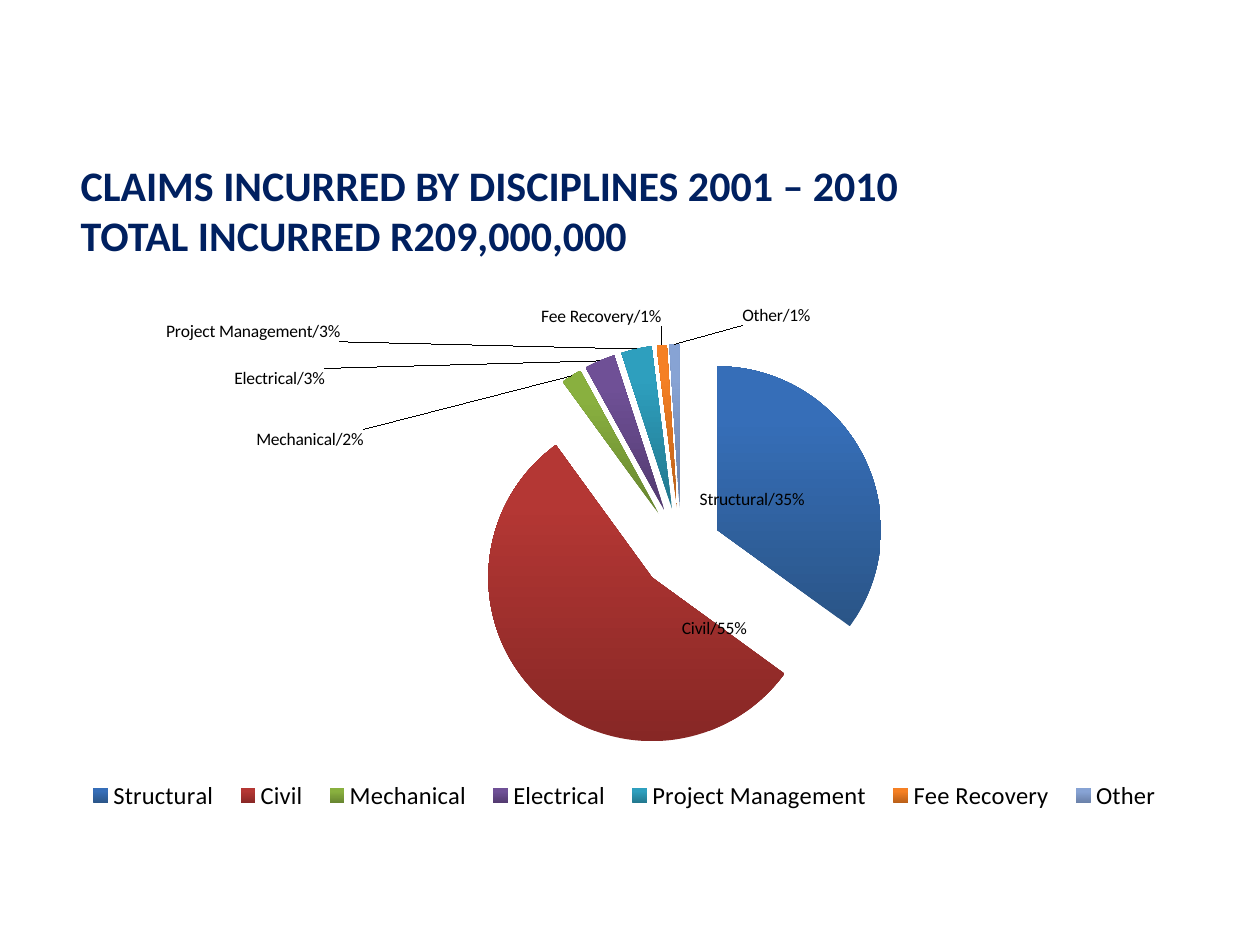
from lxml import etree
from pptx import Presentation
from pptx.chart.data import CategoryChartData
from pptx.dml.color import RGBColor
from pptx.enum import chart as charts, text
from pptx.oxml import parse_xml
from pptx.util import Inches, Pt

COLORS = {"title": "002060", "text": "000000"}
CHART_NS = "http://schemas.openxmlformats.org/drawingml/2006/chart"
# discipline, share, (bottom, top) slice colours, label offset as share of chart
CLAIMS = [
    ("Structural", 0.35, ("2A5587", "366EB8"), (-0.15, 0.1)),
    ("Civil", 0.55, ("872725", "B43734"), (0.19, -0.14)),
    ("Mechanical", 0.02, ("678530", "89B03F"), (-0.18, 0.14)),
    ("Electrical", 0.03, ("523A6F", "6F5096"), (-0.24, 0.06)),
    ("Project Management", 0.03, ("22778D", "2E9FBE"), (-0.26, 0)),
    ("Fee Recovery", 0.01, ("B95F18", "F58024"), (0, -0.02)),
    ("Other", 0.01, ("6A80A8", "87A3D4"), (0.09, -0.02)),
]


def format_font(font, size, color, bold=False):
    values = {"name": "Calibri", "size": Pt(size), "bold": bold}
    for name, value in values.items():
        setattr(font, name, value)
    font.color.rgb = RGBColor.from_string(COLORS[color])


def place(shape, box):
    for name, value in zip(("left", "top", "width", "height"), box):
        setattr(shape, name, Inches(value))


def add_title(slide, box):
    title = slide.shapes.title
    place(title, box)
    frame = title.text_frame
    frame.text = "CLAIMS INCURRED BY DISCIPLINES 2001 – 2010\vTOTAL INCURRED R209,000,000"
    frame.vertical_anchor = text.MSO_ANCHOR.MIDDLE
    paragraph = frame.paragraphs[0]
    paragraph.alignment = text.PP_ALIGN.LEFT
    for run in paragraph.runs:
        format_font(run.font, 24, "title", bold=True)


def manual_layout(x, y, size=None, target=""):
    """Return a layout element: an offset, or a fixed box when a size is given."""
    modes = '<c:xMode val="edge"/><c:yMode val="edge"/>' if size else ""
    extent = f'<c:w val="{size[0]}"/><c:h val="{size[1]}"/>' if size else ""
    return parse_xml(
        f'<c:layout xmlns:c="{CHART_NS}"><c:manualLayout>{target}{modes}'
        f'<c:x val="{x}"/><c:y val="{y}"/>{extent}</c:manualLayout></c:layout>')


def set_layout(element, index, layout):
    for old in element.findall(f"{{{CHART_NS}}}layout"):
        element.remove(old)
    element.insert(index, layout)


def add_labels(plot, points):
    """Show name/share beside each slice, with leader lines."""
    plot.has_data_labels = True
    labels = plot.series[0].data_labels
    labels.show_category_name = labels.show_value = True
    labels.number_format, labels.number_format_is_linked = "0%", False
    format_font(labels.font, 10, "text")
    for point, (_, _, _, offset) in zip(points, CLAIMS):
        point.data_label.position = charts.XL_LABEL_POSITION.OUTSIDE_END
        label = point.data_label._dLbl
        set_layout(label, 1, manual_layout(*offset))
        label.find(f"{{{CHART_NS}}}showCatName").set("val", "1")
        separator = etree.SubElement(label, f"{{{CHART_NS}}}separator")
        separator.text = "/"
    element = labels._element
    leader = element.find(f"{{{CHART_NS}}}showLeaderLines")
    if leader is None:
        leader = etree.SubElement(element, f"{{{CHART_NS}}}showLeaderLines")
    leader.set("val", "1")
    separator = etree.Element(f"{{{CHART_NS}}}separator")
    separator.text = "/"
    leader.addprevious(separator)


def add_legend(chart):
    chart.has_legend = True
    legend = chart.legend
    legend.position = charts.XL_LEGEND_POSITION.BOTTOM
    legend.include_in_layout = False
    format_font(legend.font, 14, "text")
    set_layout(legend._element, 1, manual_layout(0.01, 0.88, (0.97, 0.07)))


def add_claims_pie(slide, box):
    data = CategoryChartData(number_format="0%")
    data.categories = [claim[0] for claim in CLAIMS]
    data.add_series("Series 1", [claim[1] for claim in CLAIMS])
    chart = slide.shapes.add_chart(
        charts.XL_CHART_TYPE.PIE_EXPLODED, *map(Inches, box), data).chart
    chart.has_title = False
    format_font(chart.font, 10, "text")
    add_legend(chart)

    plot = chart.plots[0]
    plot.vary_by_categories = True
    points = [plot.series[0].points[i] for i in range(len(CLAIMS))]
    for point, (_, _, shades, _) in zip(points, CLAIMS):
        fill = point.format.fill
        fill.gradient()
        fill.gradient_angle = 90
        for stop, shade, position in zip(fill.gradient_stops, shades, (0, 0.8)):
            stop.color.rgb = RGBColor.from_string(shade)
            stop.position = position
    add_labels(plot, points)
    set_layout(chart._chartSpace.chart.plotArea, 0, manual_layout(
        0.11, 0.12, (0.87, 0.72), '<c:layoutTarget val="inner"/>'))


def main():
    presentation = Presentation()
    presentation.slide_width, presentation.slide_height = Inches(10), Inches(7.5)
    slide = presentation.slides.add_slide(presentation.slide_layouts[5])
    add_title(slide, (0.54, 1.21, 8.38, 0.91))
    add_claims_pie(slide, (0.5, 2.19, 9, 4.51))
    presentation.save("out.pptx")


if __name__ == "__main__":
    main()
